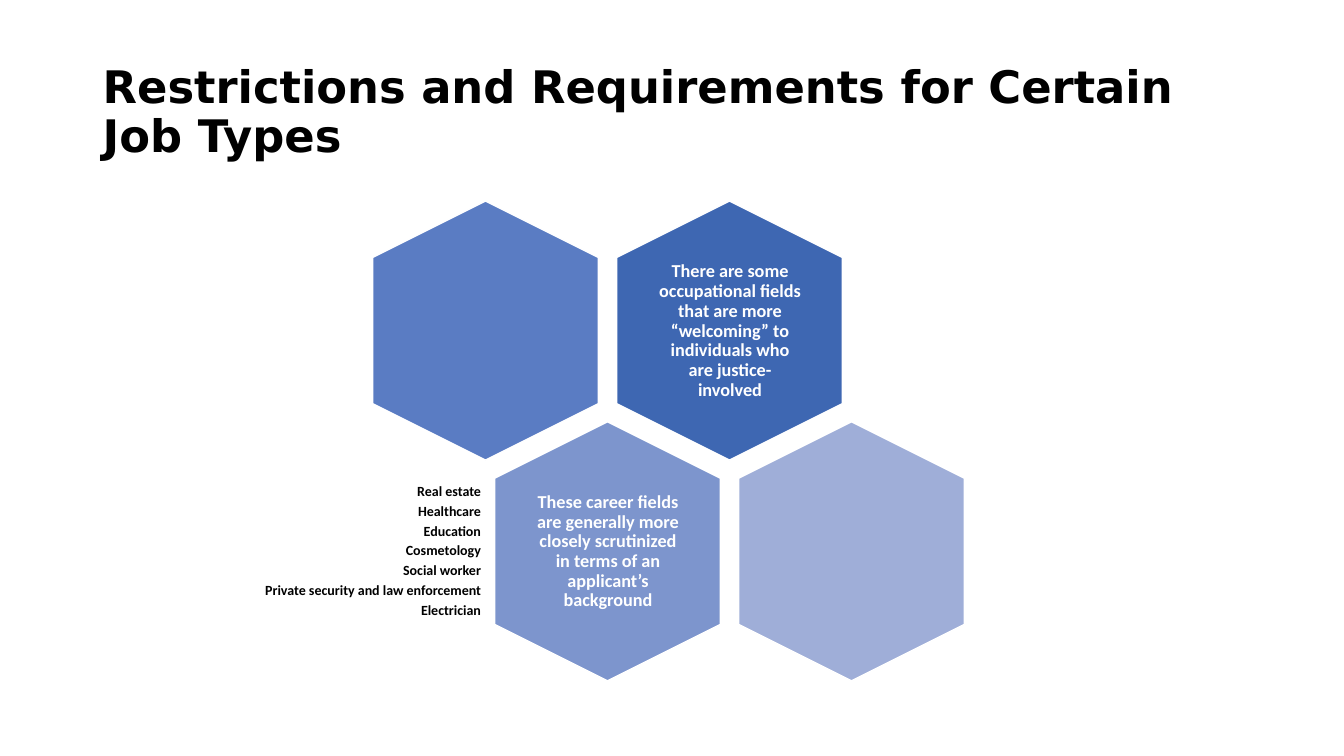
from pptx import Presentation
from pptx.dml.color import RGBColor
from pptx.enum.shapes import MSO_SHAPE as Shape
from pptx.enum.text import MSO_ANCHOR as Anchor, PP_ALIGN as Align
from pptx.util import Inches, Pt

TITLE = "Restrictions and Requirements for Certain Job Types"
WELCOME = ("There are some occupational fields that are more “welcoming” "
           "to individuals who are justice-involved")
SCRUTINY = ("These career fields are generally more closely scrutinized in "
            "terms of an applicant’s background")
FIELDS = ["Real estate", "Healthcare", "Education", "Cosmetology",
          "Social worker", "Private security and law enforcement",
          "Electrician"]

# row, column, fill, text
CELLS = [
    (0, 1, "3E67B2", WELCOME),
    (0, 0, "5A7CC3", None),
    (1, 0, "7D95CD", SCRUTINY),
    (1, 1, "9FAED8", None),
]
LEFT, TOP = 3.53, 2.16
WIDTH, HEIGHT = 2.57, 2.24
STEP, DROP = 2.42, 2.19


def color(code):
    return RGBColor.from_string(code)


def add_text(slide, box, lines, size, ink, align, font="Calibri",
             inset=(0.05, 0.05), after=0):
    """Add bold text; box is left, top, width, height in inches."""
    frame = slide.shapes.add_textbox(*map(Inches, box)).text_frame
    frame.word_wrap = True
    frame.vertical_anchor = Anchor.MIDDLE
    frame.margin_left = frame.margin_right = Inches(inset[0])
    frame.margin_top = frame.margin_bottom = Inches(inset[1])
    frame.text = "\n".join(lines)
    for para in frame.paragraphs:
        para.alignment = align
        para.line_spacing = 0.9
        para.space_after = Pt(after)
        para.font.name = font
        para.font.size = Pt(size)
        para.font.bold = True
        para.font.color.rgb = color(ink)


def add_hexagon(slide, left, top, fill):
    hexagon = slide.shapes.add_shape(
        Shape.HEXAGON, *map(Inches, (left, top, WIDTH, HEIGHT)))
    hexagon.rotation = 90
    hexagon.adjustments[0] = 0.25
    hexagon.shadow.inherit = False
    hexagon.fill.solid()
    hexagon.fill.fore_color.rgb = color(fill)
    hexagon.line.color.rgb = color("FFFFFF")
    hexagon.line.width = Pt(1)


def main():
    deck = Presentation()
    deck.slide_width, deck.slide_height = Inches(13.33), Inches(7.5)
    slide = deck.slides.add_slide(deck.slide_layouts[6])

    add_text(slide, (0.92, 0.4, 11.5, 1.45), [TITLE], 32, "000000",
             Align.LEFT, font="DejaVu Sans", inset=(0.1, 0.05))
    for row, col, fill, text in CELLS:
        left = LEFT + col * STEP + row * STEP / 2
        top = TOP + row * DROP
        add_hexagon(slide, left, top, fill)
        if text:
            add_text(slide, (left + 0.52, top + 0.24, 1.54, 1.77), [text],
                     13, "FFFFFF", Align.CENTER)
    add_text(slide, (2.03, 4.7, 2.78, 1.54), FIELDS, 10, "000000",
             Align.RIGHT, inset=(0.04, 0.04), after=3.3)

    deck.save("out.pptx")


if __name__ == "__main__":
    main()
